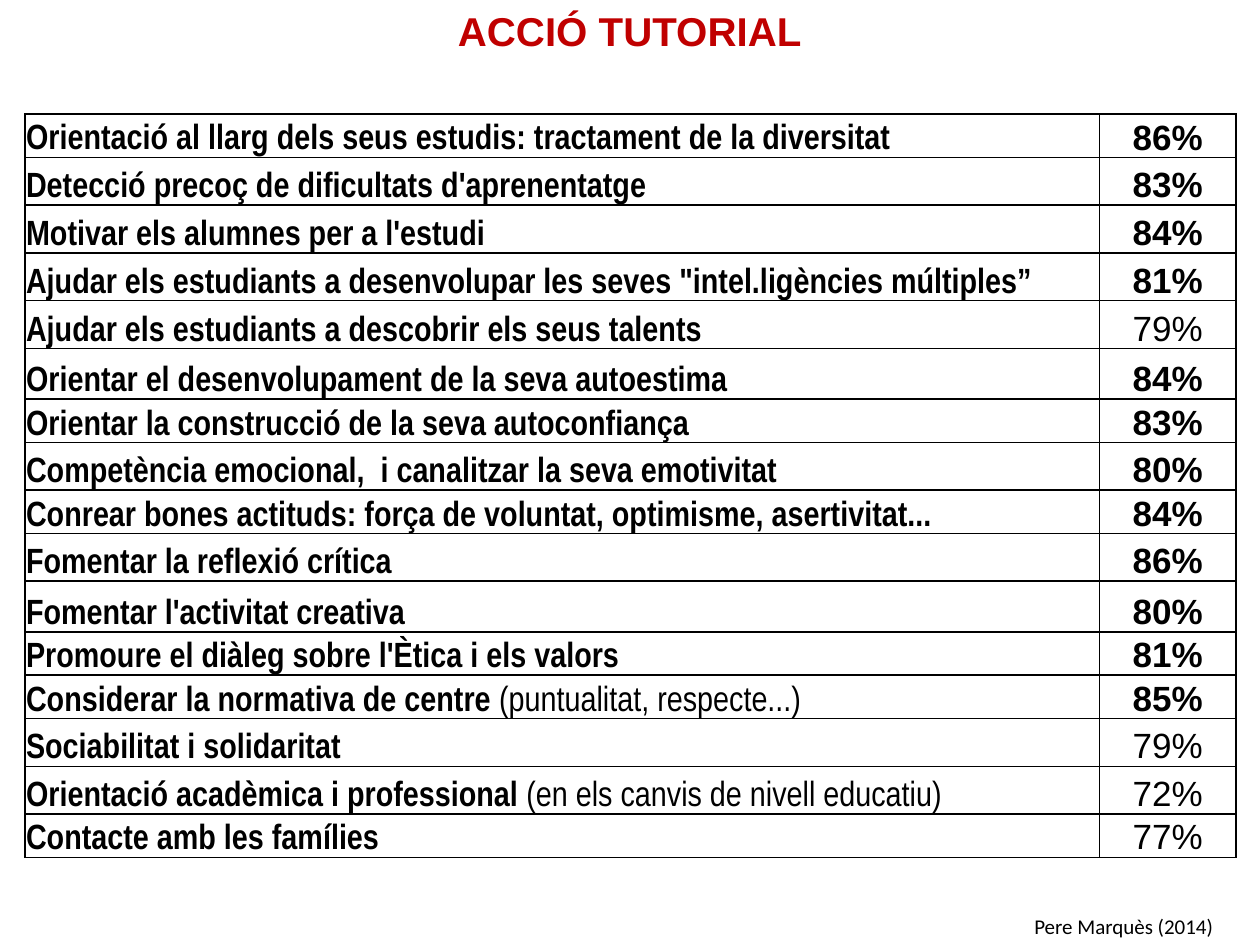
from typing import NamedTuple

from lxml import etree
from pptx import Presentation
from pptx.dml.color import RGBColor
from pptx.enum import text
from pptx.oxml import ns
from pptx.util import Pt

BLACK = RGBColor(0x00, 0x00, 0x00)
WHITE = RGBColor(0xFF, 0xFF, 0xFF)
RED = RGBColor(0xC0, 0x00, 0x00)

LOW, MEDIUM, HIGH = 24.5, 27.3, 29
BOLD_FROM = 80  # percentages from here on are stressed


class Action(NamedTuple):
    label: str
    percent: int
    height: float
    remark: str = ""


ACTIONS = [
    Action("Orientació al llarg dels seus estudis: tractament de la diversitat", 86, LOW),
    Action("Detecció precoç de dificultats d'aprenentatge", 83, MEDIUM),
    Action("Motivar els alumnes per a l'estudi", 84, MEDIUM),
    Action("Ajudar els estudiants a desenvolupar les seves \"intel.ligències múltiples”", 81, MEDIUM),
    Action("Ajudar els estudiants a descobrir els seus talents", 79, MEDIUM),
    Action("Orientar el desenvolupament de la seva autoestima", 84, HIGH),
    Action("Orientar la construcció de la seva autoconfiança", 83, LOW),
    Action("Competència emocional,  i canalitzar la seva emotivitat", 80, MEDIUM),
    Action("Conrear bones actituds: força de voluntat, optimisme, asertivitat...", 84, LOW),
    Action("Fomentar la reflexió crítica", 86, MEDIUM),
    Action("Fomentar l'activitat creativa", 80, HIGH),
    Action("Promoure el diàleg sobre l'Ètica i els valors", 81, LOW),
    Action("Considerar la normativa de centre ", 85, LOW, "(puntualitat, respecte...)"),
    Action("Sociabilitat i solidaritat", 79, MEDIUM),
    Action("Orientació acadèmica i professional ", 72, MEDIUM, "(en els canvis de nivell educatiu)"),
    Action("Contacte amb les famílies", 77, LOW),
]


def set_font(para, name: str, size: float, color: RGBColor) -> None:
    para.font.name = name
    para.font.size = Pt(size)
    para.font.color.rgb = color


def add_span(para, words: str, bold: bool) -> None:
    span = para.add_run()
    span.text = words
    span.font.bold = bold


def add_borders(cell) -> None:
    properties = cell._tc.get_or_add_tcPr()
    for side in ("lnL", "lnR", "lnT", "lnB"):
        line = etree.SubElement(properties, ns.qn(f"a:{side}"), w=str(Pt(1)))
        fill = etree.SubElement(line, ns.qn("a:solidFill"))
        etree.SubElement(fill, ns.qn("a:srgbClr"), val=str(BLACK))


def format_cell(cell, font_name: str, filled: bool) -> None:
    add_borders(cell)
    if filled:
        cell.fill.solid()
        cell.fill.fore_color.rgb = WHITE
    else:
        cell.fill.background()
    cell.margin_left = cell.margin_right = cell.margin_top = Pt(0.7)
    cell.margin_bottom = Pt(0)
    cell.vertical_anchor = text.MSO_ANCHOR.BOTTOM
    set_font(cell.text_frame.paragraphs[0], font_name, 20, BLACK)


def add_title(slide) -> None:
    title = slide.shapes.title
    title.left, title.top, title.width, title.height = Pt(0), Pt(0), Pt(720), Pt(59)
    frame = title.text_frame
    frame.text = "ACCIÓ TUTORIAL"
    frame.auto_size = text.MSO_AUTO_SIZE.NONE
    frame.vertical_anchor = text.MSO_ANCHOR.TOP
    para = frame.paragraphs[0]
    para.alignment = text.PP_ALIGN.CENTER
    set_font(para, "Arial", 23, RED)
    para.font.bold = True


def add_action_table(slide, actions: list[Action]) -> None:
    height = sum(action.height for action in actions)
    frame = slide.shapes.add_table(len(actions), 2, Pt(14.2), Pt(65.2), Pt(692), Pt(height))
    table = frame.table
    table.first_row = table.horz_banding = False
    table.columns[0].width = Pt(614.2)
    table.columns[1].width = Pt(77.8)
    for index, (row, action) in enumerate(zip(table.rows, actions)):
        row.height = Pt(action.height)
        label_cell, percent_cell = row.cells
        format_cell(label_cell, "Arial Narrow", filled=index > 0)
        format_cell(percent_cell, "Arial", filled=index > 0)

        para = label_cell.text_frame.paragraphs[0]
        add_span(para, action.label, bold=True)
        if action.remark:
            add_span(para, action.remark, bold=False)

        para = percent_cell.text_frame.paragraphs[0]
        para.alignment = text.PP_ALIGN.CENTER
        add_span(para, f"{action.percent}%", bold=action.percent >= BOLD_FROM)


def add_author(slide) -> None:
    box = slide.shapes.add_textbox(Pt(584), Pt(518.2), Pt(136), Pt(21.8))
    box.text_frame.word_wrap = True
    box.text_frame.text = "Pere Marquès (2014)"
    set_font(box.text_frame.paragraphs[0], "Calibri", 12, BLACK)


def main() -> None:
    deck = Presentation()
    deck.slide_width, deck.slide_height = Pt(720), Pt(540)
    slide = deck.slides.add_slide(deck.slide_layouts.get_by_name("Title Only"))
    add_author(slide)
    add_title(slide)
    add_action_table(slide, ACTIONS)
    deck.save("out.pptx")


if __name__ == "__main__":
    main()
